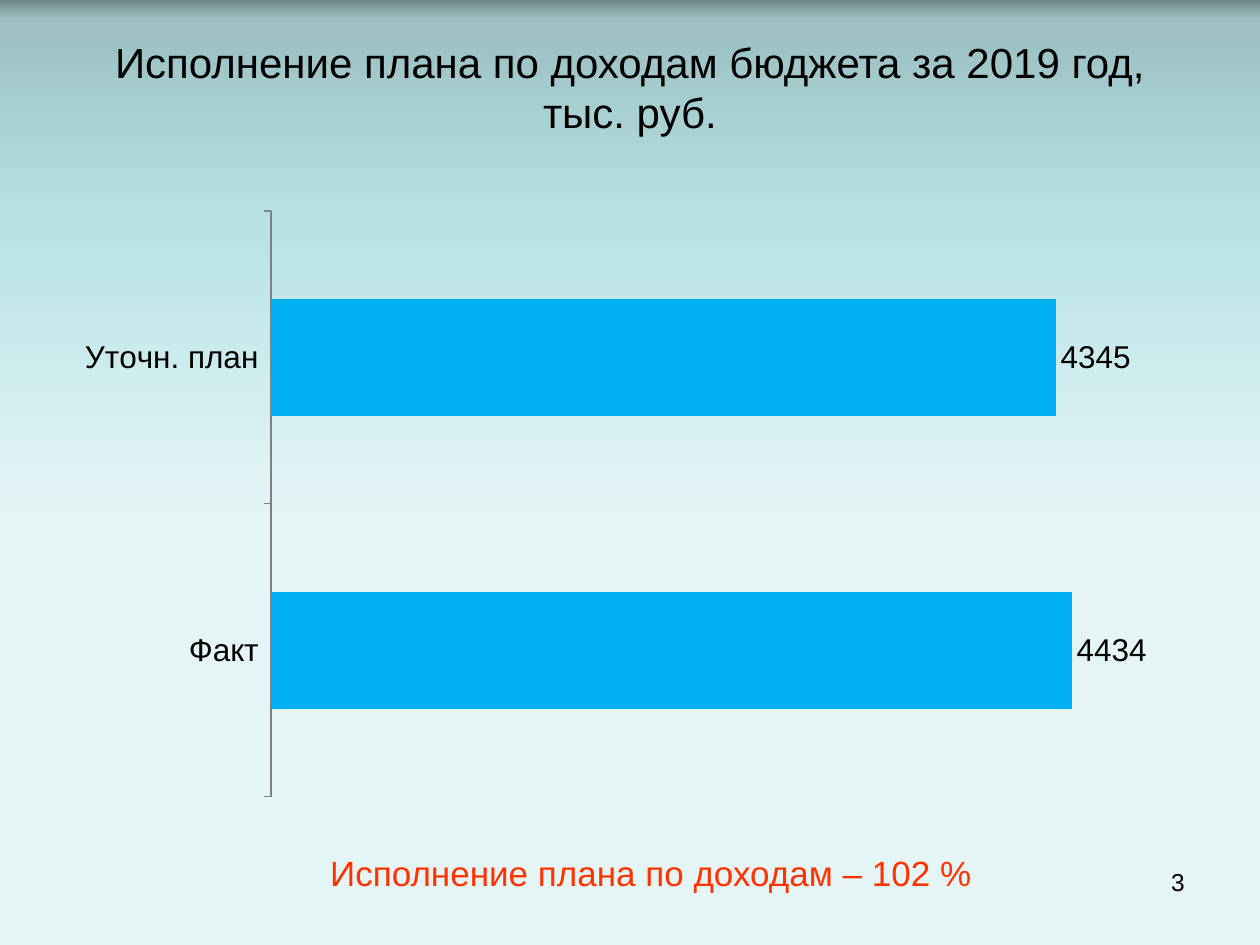
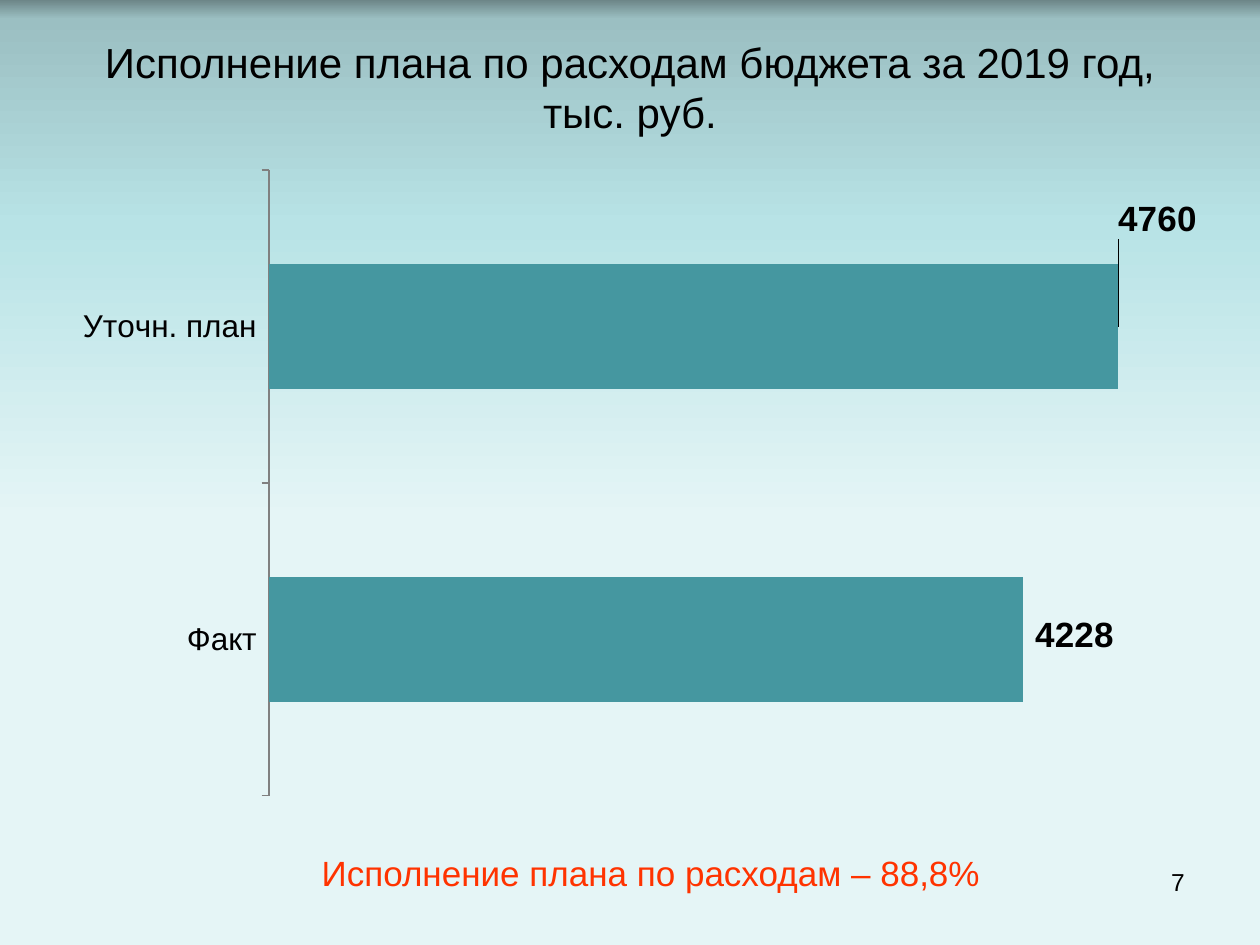
from lxml.etree import SubElement
from pptx import Presentation
from pptx.chart.data import CategoryChartData
from pptx.dml.color import RGBColor
from pptx.enum.chart import XL_CHART_TYPE, XL_LABEL_POSITION, XL_TICK_MARK
from pptx.enum.text import MSO_ANCHOR, PP_ALIGN
from pptx.oxml import parse_xml
from pptx.oxml.ns import nsdecls, qn
from pptx.util import Emu, Pt

PX_PER_INCH = 126
FONT = "Arial"
BLACK, RED, AXIS_GREY = "000000", "FF3300", "808080"
BACKGROUND_STOPS = [(0, "6D8688"), (2, "9BBFC2"), (24, "B8E3E6"),
                    (55, "E5F5F6"), (100, "E5F5F6")]
CATEGORIES = ["Факт", "Уточн. план"]
CHART_LEFT, CHART_WIDTH = 63, 1134


def px(length):
    return Emu(round(length * 914400 / PX_PER_INCH))


def color(value):
    return RGBColor.from_string(value)


def set_font(font, size, value=BLACK, bold=False):
    font.name, font.size, font.bold = FONT, Pt(size), bold
    font.color.rgb = color(value)


def paint_background(page):
    fill = page.background.fill
    fill.gradient()
    fill.gradient_angle = 270  # counter-clockwise, so from top to bottom
    stops = page.element.find(".//" + qn("a:gsLst"))
    for stop in list(stops):
        stops.remove(stop)
    for percent, value in BACKGROUND_STOPS:
        stop = SubElement(stops, qn("a:gs"), pos=str(percent * 1000))
        SubElement(stop, qn("a:srgbClr"), val=value)


def add_text(page, text, area, size, value=BLACK,
             align=PP_ALIGN.CENTER, anchor=MSO_ANCHOR.MIDDLE):
    box = page.shapes.add_textbox(*map(px, area))
    frame = box.text_frame
    frame.word_wrap = True
    frame.vertical_anchor = anchor
    para = frame.paragraphs[0]
    para.text = text
    para.alignment = align
    set_font(para.font, size, value)


def manual_layout(**settings):
    parts = "".join(f'<c:{key} val="{item}"/>' for key, item in settings.items())
    return parse_xml(f'<c:layout {nsdecls("c")}><c:manualLayout>{parts}'
                     '</c:manualLayout></c:layout>')


def place_plot(chart, plot, top, height):
    """Fix the inner plot area, given in page px."""
    left, upper, width, depth = plot
    area = chart.element.find(".//" + qn("c:plotArea"))
    for layout in area.findall(qn("c:layout")):
        area.remove(layout)
    area.insert(0, manual_layout(
        layoutTarget="inner", xMode="edge", yMode="edge",
        x=round((left - CHART_LEFT) / CHART_WIDTH, 4),
        y=round((upper - top) / height, 4),
        w=round(width / CHART_WIDTH, 4), h=round(depth / height, 4)))


def shift_label(series, index, shift, height, size):
    """Move one value label away from the end of its bar by px."""
    label = series.points[index].data_label
    set_font(label.font, size, bold=True)
    label.position = XL_LABEL_POSITION.OUTSIDE_END
    element = series.data_labels._element.findall(qn("c:dLbl"))[index]
    element.find(qn("c:idx")).addnext(manual_layout(
        x=round(shift[0] / CHART_WIDTH, 4), y=round(shift[1] / height, 4)))


def add_bar_chart(page, values, bar_color, top, height, plot,
                  label_size=18, label_shifts=()):
    data = CategoryChartData()
    data.categories = CATEGORIES
    data.add_series("Series 1", values)
    chart = page.shapes.add_chart(
        XL_CHART_TYPE.BAR_CLUSTERED, px(CHART_LEFT), px(top),
        px(CHART_WIDTH), px(height), data).chart
    chart.has_legend = False
    chart.has_title = False
    set_font(chart.font, 18)

    # Axes
    names = chart.category_axis
    names.major_tick_mark = XL_TICK_MARK.OUTSIDE
    names.format.line.color.rgb = color(AXIS_GREY)
    names.format.line.width = Pt(0.75)
    scale = chart.value_axis
    scale.minimum_scale, scale.maximum_scale = 0, 5000
    scale.has_major_gridlines = False
    scale.visible = False

    # Bars and their values
    bars = chart.plots[0]
    bars.gap_width = 150
    bars.vary_by_categories = False
    series = bars.series[0]
    series.format.fill.solid()
    series.format.fill.fore_color.rgb = color(bar_color)
    labels = series.data_labels
    labels.show_value = True
    labels.position = XL_LABEL_POSITION.OUTSIDE_END
    set_font(labels.font, label_size, bold=bool(label_shifts))
    for index, shift in enumerate(label_shifts):
        shift_label(series, index, shift, height, label_size)
    place_plot(chart, plot, top, height)


def add_page(deck, subject, result, number, **chart):
    page = deck.slides.add_slide(deck.slide_layouts[6])
    paint_background(page)
    add_text(page, f"Исполнение плана по {subject} бюджета за 2019 год,\vтыс. руб.",
             (63, 38, 1134, 98), 24)
    add_bar_chart(page, **chart)
    add_text(page, number, (903, 861, 294, 66), 14,
             align=PP_ALIGN.RIGHT, anchor=MSO_ANCHOR.TOP)
    add_text(page, f"Исполнение плана по {subject} – {result}",
             (273, 851, 756, 42), 20, RED)


def main():
    deck = Presentation()
    deck.slide_width, deck.slide_height = px(1260), px(945)
    add_page(deck, "доходам", "102 %", "3", values=(4434, 4345),
             bar_color="00B0F0", top=199, height=609,
             plot=(271, 211, 903, 586))
    add_page(deck, "расходам", "88,8%", "7", values=(4228, 4760),
             bar_color="4597A0", top=158, height=651,
             plot=(269, 170, 892, 626),
             label_size=20, label_shifts=((7, -4), (-5, -107)))
    deck.save("out.pptx")


if __name__ == "__main__":
    main()
